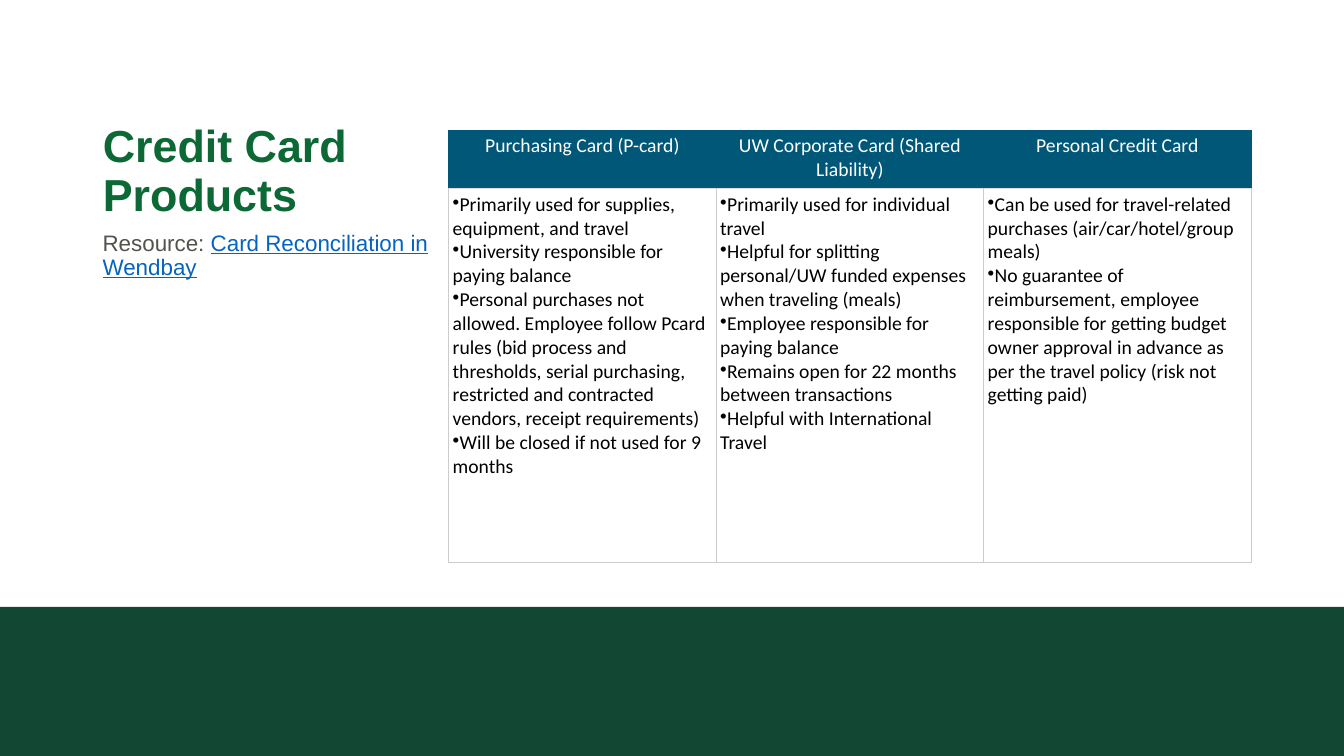
"""Build the slide that compares three credit card products."""
from dataclasses import dataclass

import pptx
import pptx.dml.color
import pptx.enum.shapes
import pptx.enum.text
import pptx.oxml
import pptx.oxml.ns
import pptx.util
from lxml import etree

Inches = pptx.util.Inches
Pt = pptx.util.Pt
ALIGN = pptx.enum.text.PP_ALIGN
ANCHOR = pptx.enum.text.MSO_ANCHOR

HUES = {
    "band": "114733",
    "title": "0C6835",
    "body": "53534C",
    "link": "0563C1",
    "head": "005777",
    "rule": "DDDDDD",
    "edge": "CCCCCC",
    "white": "FFFFFF",
    "black": "000000",
}


@dataclass
class Card:
    """A card product and its facts."""
    name: str
    facts: list[str]


@dataclass
class Look:
    """Colours of a table cell."""
    fill: str
    ink: str
    side: str
    top: str
    base: str


CARDS = [
    Card("Purchasing Card (P-card)", [
        "Primarily used for supplies, equipment, and travel",
        "University responsible for paying balance",
        "Personal purchases not allowed. Employee follow Pcard rules (bid process and "
        "thresholds, serial purchasing, restricted and contracted vendors, "
        "receipt requirements)",
        "Will be closed if not used for 9 months",
    ]),
    Card("UW Corporate Card (Shared Liability)", [
        "Primarily used for individual travel",
        "Helpful for splitting personal/UW funded expenses when traveling (meals)",
        "Employee responsible for paying balance",
        "Remains open for 22 months between transactions",
        "Helpful with International Travel",
    ]),
    Card("Personal Credit Card", [
        "Can be used for travel-related purchases (air/car/hotel/group meals)",
        "No guarantee of reimbursement, employee responsible for getting budget owner "
        "approval in advance as per the travel policy (risk not getting paid)",
    ]),
]
HEAD = Look("head", "white", "head", "head", "rule")
BODY = Look("white", "black", "edge", "rule", "edge")


def tint(hue: str) -> pptx.dml.color.RGBColor:
    """Return the named colour."""
    return pptx.dml.color.RGBColor.from_string(HUES[hue])


def add_run(para, text: str, size: float, face: str, hue: str,
            bold: bool = False, line: bool = False) -> None:
    """Add one styled run to a paragraph."""
    run = para.add_run()
    run.text = text
    font = run.font
    font.size = Pt(size)
    font.name = face
    font.bold = bold
    font.underline = line
    font.color.rgb = tint(hue)


def add_edge(cell, side: str, hue: str) -> None:
    """Add a thin border to one side of a cell."""
    name = pptx.oxml.ns.qn
    props = cell._tc.get_or_add_tcPr()
    line = etree.SubElement(props, name(f"a:ln{side}"), w=str(Pt(0.5)))
    fill = etree.SubElement(line, name("a:solidFill"))
    etree.SubElement(fill, name("a:srgbClr"), val=HUES[hue])


def fill_cell(cell, lines: list[str], look: Look, dots: bool) -> None:
    """Write the lines of a cell and style it."""
    for side, hue in zip("LRTB", (look.side, look.side, look.top, look.base)):
        add_edge(cell, side, hue)
    cell.fill.solid()
    cell.fill.fore_color.rgb = tint(look.fill)
    cell.margin_left = cell.margin_right = Inches(0.04)
    cell.margin_top = cell.margin_bottom = Inches(0.04)
    cell.vertical_anchor = ANCHOR.TOP
    frame = cell.text_frame
    for i, text in enumerate(lines):
        para = frame.add_paragraph() if i else frame.paragraphs[0]
        if dots:
            props = para._p.get_or_add_pPr()
            etree.SubElement(props, pptx.oxml.ns.qn("a:buChar"), char="•")
        para.alignment = ALIGN.LEFT if dots else ALIGN.CENTER
        add_run(para, text, 14, "Calibri", look.ink)


def add_band(slide) -> None:
    """Draw the green band at the foot."""
    band = slide.shapes.add_shape(
        pptx.enum.shapes.MSO_SHAPE.RECTANGLE,
        Inches(0), Inches(6.02), Inches(13.33), Inches(1.48))
    band.shadow.inherit = False
    band.fill.solid()
    band.fill.fore_color.rgb = tint("band")
    band.line.fill.background()


def add_title(slide) -> None:
    """Place and write the title."""
    title = slide.shapes.title
    title.left, title.top = Inches(0.92), Inches(0.49)
    title.width, title.height = Inches(4.3), Inches(1.75)
    frame = title.text_frame
    frame.word_wrap = True
    frame.auto_size = pptx.enum.text.MSO_AUTO_SIZE.NONE
    frame.vertical_anchor = ANCHOR.BOTTOM
    para = frame.paragraphs[0]
    para.alignment = ALIGN.LEFT
    para.line_spacing = 0.9
    add_run(para, "Credit Card Products", 32, "Arial", "title", bold=True)


def add_table(slide) -> None:
    """Draw the table of cards."""
    table = slide.shapes.add_table(
        2, len(CARDS), Inches(4.45), Inches(1.29), Inches(7.96), Inches(4.29)).table
    table.first_row = table.horz_banding = False
    table.rows[0].height = Inches(0.58)
    table.rows[1].height = Inches(3.71)
    for i, card in enumerate(CARDS):
        fill_cell(table.cell(0, i), [card.name], HEAD, dots=False)
        fill_cell(table.cell(1, i), card.facts, BODY, dots=True)


def add_note(slide) -> None:
    """Write the resource line under the title."""
    box = slide.shapes.add_textbox(
        Inches(0.92), Inches(2.25), Inches(4.3), Inches(3.52))
    box.text_frame.word_wrap = True
    para = box.text_frame.paragraphs[0]
    para.line_spacing = 0.9
    add_run(para, "Resource: ", 16, "Arial", "body")
    add_run(para, "Card Reconciliation in Wendbay", 16, "Arial", "link", line=True)


def main() -> None:
    """Build and save the deck."""
    deck = pptx.Presentation()
    deck.slide_width, deck.slide_height = Inches(13.33), Inches(7.5)
    slide = deck.slides.add_slide(deck.slide_layouts[5])
    add_band(slide)
    add_title(slide)
    add_table(slide)
    add_note(slide)
    deck.save("out.pptx")


if __name__ == "__main__":
    main()
